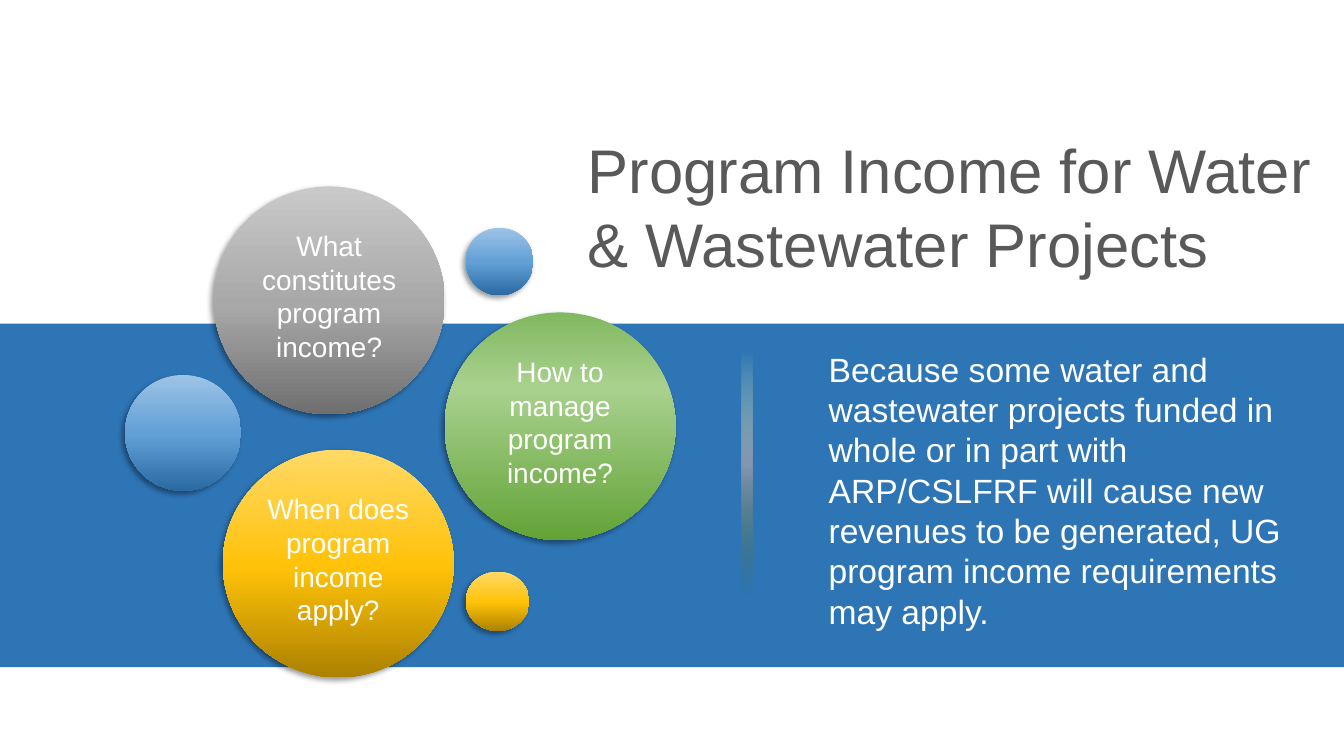
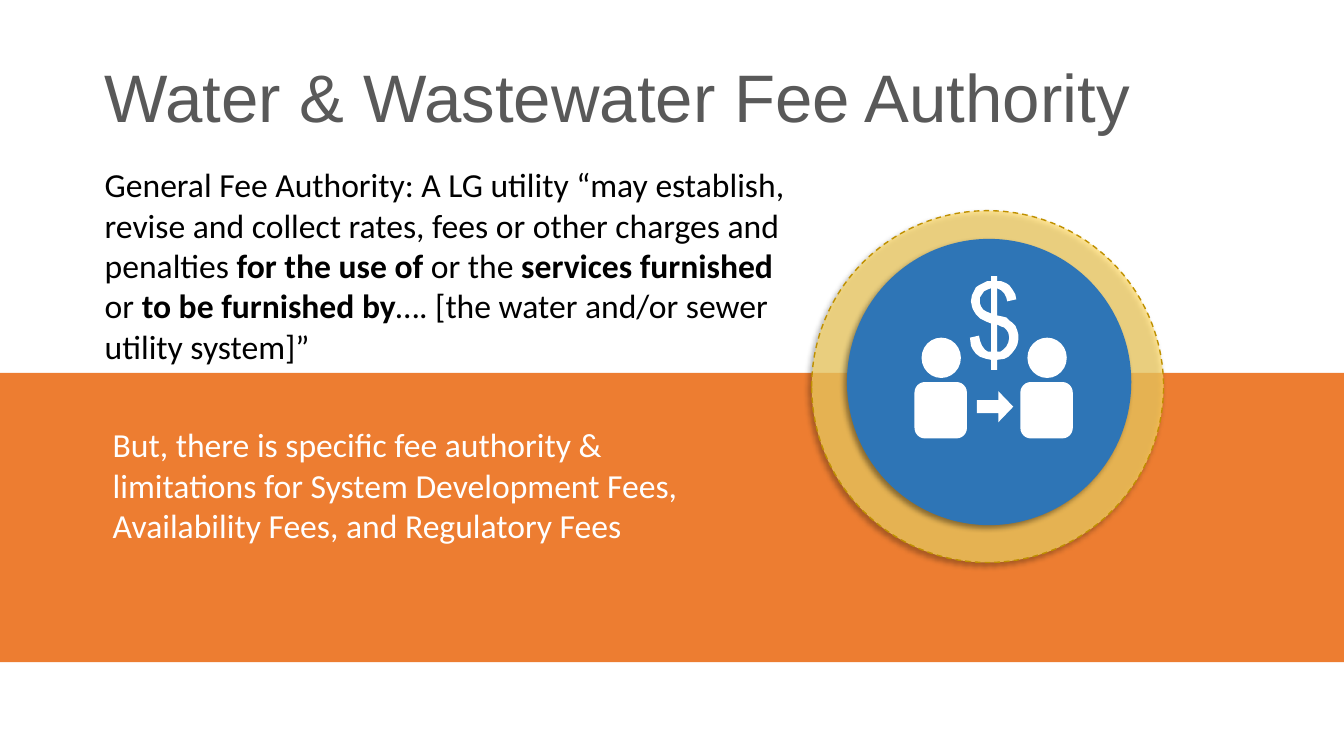
from lxml import etree
from pptx import Presentation
from pptx import util as u
from pptx.dml.color import RGBColor
from pptx.enum import dml, shapes, text
from pptx.oxml.ns import qn

EMU_PER_PX = 9144  # 100 px to the inch
SLIDE_W, SLIDE_H = 1333, 750

# Colours
WHITE = RGBColor(0xFF, 0xFF, 0xFF)
BLACK = RGBColor(0x00, 0x00, 0x00)
TITLE_GREY = RGBColor(0x59, 0x59, 0x59)
BLUE = RGBColor(0x2E, 0x75, 0xB6)
ORANGE = RGBColor(0xED, 0x7D, 0x31)
GOLD = RGBColor(0xFF, 0xD9, 0x66)
DARK_GOLD = RGBColor(0xBF, 0x90, 0x00)


def stops(*triples):
    """Gradient stops from top to bottom: position %, colour, opacity %."""
    return [(at, RGBColor.from_string(code), opacity)
            for at, code, opacity in triples]


GREY_FADE = stops((0, "C9C9C9", 100), (52, "A8A8A8", 100), (100, "6F6F6F", 100))
GREEN_FADE = stops((0, "81B861", 100), (33, "A9D18E", 100), (100, "62A336", 100))
BLUE_FADE = stops((0, "9DC3E6", 100), (52, "609ED6", 100), (100, "2A69A2", 100))
GOLD_FADE = stops((0, "FFD966", 100), (52, "FFC208", 100), (100, "AB8100", 100))
DIVIDER_FADE = stops((0, "C5E0B4", 0), (47, "8497B0", 100), (100, "43682B", 0))

# Text styles: font attributes and colour
OPENING_TITLE = {"name": "Arial", "size": u.Pt(44)}, TITLE_GREY
TITLE = {"name": "Arial", "size": u.Pt(48)}, TITLE_GREY
BUBBLE_LABEL = {"name": "Arial", "size": u.Pt(20)}, WHITE
SUMMARY = {"name": "Arial", "size": u.Pt(24)}, WHITE
QUOTE = {"name": "Calibri", "size": u.Pt(24)}, BLACK
CAVEAT = {"name": "Calibri", "size": u.Pt(24)}, WHITE

# Dollar sign contours: lower bowl, upper bowl, outline
DOLLAR = [
    [(27, 48), (27, 75), (30, 75), (33, 73), (36, 70), (38, 66), (39, 61),
     (38, 56), (36, 53), (34, 51), (31, 50)],
    [(21, 12), (18, 13), (14, 15), (12, 18), (10, 21), (10, 27), (11, 30),
     (13, 33), (16, 35), (21, 37)],
    [(21, 0), (27, 0), (27, 5), (31, 5), (36, 7), (39, 9), (42, 13), (45, 18),
     (46, 23), (37, 25), (36, 21), (34, 17), (31, 14), (27, 12), (27, 39),
     (32, 40), (36, 41), (39, 44), (42, 46), (45, 49), (47, 54), (48, 58),
     (48, 63), (47, 68), (45, 72), (42, 76), (38, 80), (34, 82), (27, 83),
     (27, 93), (21, 93), (21, 83), (16, 82), (10, 80), (6, 77), (3, 73),
     (1, 69), (0, 61), (9, 59), (10, 64), (12, 69), (15, 73), (18, 75),
     (21, 75), (21, 47), (16, 45), (10, 42), (6, 38), (3, 33), (2, 30),
     (1, 25), (2, 19), (4, 15), (6, 11), (9, 9), (13, 7), (17, 5), (21, 5)],
]


def px(value):
    return u.Emu(int(value * EMU_PER_PX))


def set_opacity(color_element, percent):
    etree.SubElement(color_element, qn("a:alpha"), val=str(percent * 1000))


def fill_gradient(shape, fade):
    shape.fill.gradient()
    shape.fill.gradient_angle = 270
    stop_list = shape.element.spPr.find(".//" + qn("a:gsLst"))
    for stop in list(stop_list):
        stop_list.remove(stop)
    for at, color, opacity in fade:
        stop = etree.SubElement(stop_list, qn("a:gs"), pos=str(at * 1000))
        tint = etree.SubElement(stop, qn("a:srgbClr"), val=str(color))
        if opacity < 100:
            set_opacity(tint, opacity)


def cast_shadow(shape):
    effects = shape.element.spPr.find(qn("a:effectLst"))
    shadow = etree.SubElement(
        effects, qn("a:outerShdw"), blurRad=str(u.Pt(4)), dist=str(u.Pt(3)),
        dir=str(135 * 60000), algn="tr", rotWithShape="0")
    set_opacity(etree.SubElement(shadow, qn("a:srgbClr"), val=str(BLACK)), 40)


def paint(shape, fill):
    """Fill with one colour or a list of gradient stops, without outline."""
    shape.shadow.inherit = False
    if isinstance(fill, list):
        fill_gradient(shape, fill)
    else:
        shape.fill.solid()
        shape.fill.fore_color.rgb = fill
    shape.line.fill.background()
    return shape


def add_block(slide, kind, box, fill):
    preset = getattr(shapes.MSO_SHAPE, kind)
    return paint(slide.shapes.add_shape(preset, *map(px, box)), fill)


def add_disc(slide, box, fill):
    disc = add_block(slide, "OVAL", box, fill)
    cast_shadow(disc)
    return disc


def add_text(slide, box, pieces, style, align=text.PP_ALIGN.LEFT):
    """Pieces alternate between regular and bold."""
    font_values, color = style
    frame = slide.shapes.add_textbox(*map(px, box)).text_frame
    frame.word_wrap = True
    frame.auto_size = text.MSO_AUTO_SIZE.SHAPE_TO_FIT_TEXT
    paragraph = frame.paragraphs[0]
    paragraph.alignment = align
    for index, piece in enumerate(pieces):
        run = paragraph.add_run()
        run.text = piece
        for attribute, value in font_values.items():
            setattr(run.font, attribute, value)
        run.font.bold = index % 2 == 1
        run.font.color.rgb = color


def add_band(slide, top, height, color):
    add_block(slide, "RECTANGLE", (0, top, SLIDE_W, height), color)


def add_bubble_label(slide, left, top, label):
    """Place a label inside the large bubble at left, top."""
    add_text(slide, (left + 31, top + 37, 167, 145), [label], BUBBLE_LABEL,
             text.PP_ALIGN.CENTER)


def add_bubbles(slide, left, top):
    questions = [
        (88, 0, GREY_FADE, "What constitutes program income?"),
        (317, 125, GREEN_FADE, "How to manage program income?"),
        (97, 261, GOLD_FADE, "When does program income apply?"),
    ]
    accents = [
        (0, 187, 115, 115, BLUE_FADE),
        (338, 41, 67, 67, BLUE_FADE),
        (338, 382, 63, 59, GOLD_FADE),
    ]
    for dx, dy, fade, _ in questions:
        add_disc(slide, (left + dx, top + dy, 229, 226), fade)
    for dx, dy, width, height, fade in accents:
        add_disc(slide, (left + dx, top + dy, width, height), fade)
    for dx, dy, _, question in questions:
        add_bubble_label(slide, left + dx, top + dy, question)


def add_person(slide, left, top):
    add_block(slide, "OVAL", (left + 7, top, 39, 40), WHITE)
    torso = add_block(slide, "ROUNDED_RECTANGLE", (left, top + 44, 52, 56), WHITE)
    torso.adjustments[0] = 0.2


def add_dollar(slide, left, top):
    outline = slide.shapes.build_freeform(*DOLLAR[0][0], scale=EMU_PER_PX)
    for index, contour in enumerate(DOLLAR):
        if index:
            outline.move_to(*contour[0])
        outline.add_line_segments(contour[1:], close=True)
    paint(outline.convert_to_shape(px(left), px(top)), WHITE)


def add_payment_badge(slide, left, top):
    # Halo with dashed rim
    halo = add_disc(slide, (left, top, 349, 349), GOLD)
    set_opacity(halo.element.spPr.find(qn("a:solidFill"))[0], 70)
    halo.line.color.rgb = DARK_GOLD
    halo.line.width = u.Pt(1)
    halo.line.dash_style = dml.MSO_LINE.DASH
    add_disc(slide, (left + 35, top + 28, 282, 284), BLUE)

    # Two people exchanging money
    for dx in (102, 207):
        add_person(slide, left + dx, top + 126)
    arrow = add_block(slide, "RIGHT_ARROW", (left + 164, top + 179, 36, 31), WHITE)
    arrow.adjustments[0] = 0.42
    arrow.adjustments[1] = 0.48
    add_dollar(slide, left + 157, top + 65)


def build_program_income(slide):
    add_band(slide, 321, 341, BLUE)
    add_bubbles(slide, 124, 185)
    add_block(slide, "RECTANGLE", (736, 349, 10, 240), DIVIDER_FADE)
    add_text(slide, (573, 126, 795, 158),
             ["Program Income for Water & Wastewater Projects"], OPENING_TITLE)
    add_text(slide, (812, 341, 482, 293),
             ["Because some water and wastewater projects funded in whole or in "
              "part with ARP/CSLFRF will cause new revenues to be generated, UG "
              "program income requirements may apply."], SUMMARY)


def build_fee_authority(slide):
    add_band(slide, 370, 287, ORANGE)
    add_payment_badge(slide, 805, 209)
    add_text(slide, (94, 50, 1199, 91),
             ["Water & Wastewater Fee Authority"], TITLE)
    add_text(slide, (94, 158, 711, 212),
             ["General Fee Authority: A LG utility “may establish, revise and "
              "collect rates, fees or other charges and penalties ",
              "for the use of", " or the ", "services furnished ", "or ",
              "to be furnished by",
              "…. [the water and/or sewer utility system]”"], QUOTE)
    add_text(slide, (102, 416, 586, 131),
             ["But, there is specific fee authority & limitations for System "
              "Development Fees, Availability Fees, and Regulatory Fees"], CAVEAT)


def main():
    deck = Presentation()
    deck.slide_width, deck.slide_height = px(SLIDE_W), px(SLIDE_H)
    blank = deck.slide_layouts[6]
    for build in (build_program_income, build_fee_authority):
        build(deck.slides.add_slide(blank))
    deck.save("out.pptx")


if __name__ == "__main__":
    main()
